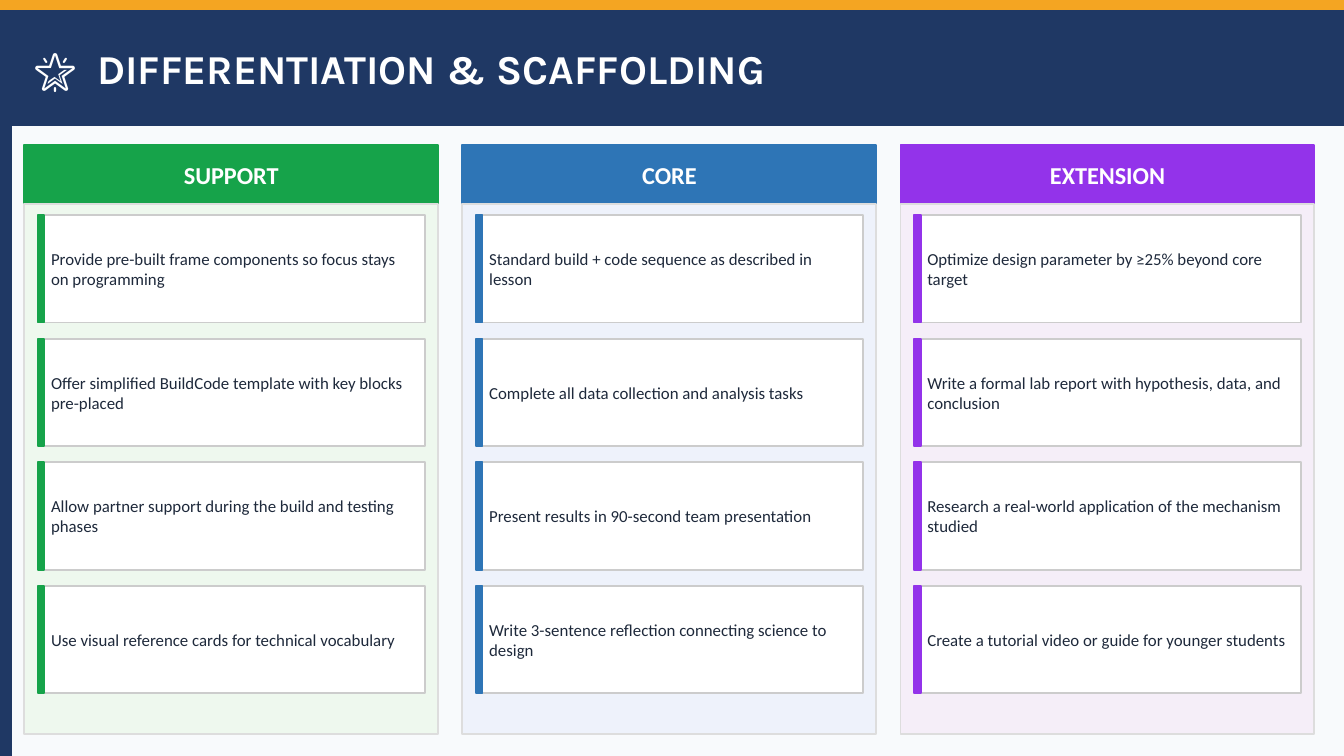
from dataclasses import dataclass

import pptx
import pptx.dml.color
import pptx.enum.shapes
import pptx.enum.text
import pptx.util

ALIGN = pptx.enum.text.PP_ALIGN
SCALE = 4572  # EMU in one px, at 200 px to the inch
COLORS = {
    "page": "F8FAFC", "navy": "1F3864", "gold": "F4A522",
    "white": "FFFFFF", "ink": "1E293B", "edge": "CCCCCC", "rim": "DDDDDD",
    "green": "16A34A", "mint": "EEF8EE",
    "blue": "2E75B6", "sky": "EEF2FB",
    "purple": "9333EA", "lilac": "F5EEF8",
}
WIDE, HIGH = 2000, 1125
BAR = 16


@dataclass(frozen=True)
class Box:
    x: int
    y: int
    w: int
    h: int

    def place(self) -> tuple[int, ...]:
        return tuple(n * SCALE for n in (self.x, self.y, self.w, self.h))


@dataclass(frozen=True)
class Level:
    name: str
    main: str
    tint: str
    tasks: tuple[str, ...]


LEVELS = (
    Level("SUPPORT", "green", "mint", (
        "Provide pre-built frame components so focus stays on programming",
        "Offer simplified BuildCode template with key blocks pre-placed",
        "Allow partner support during the build and testing phases",
        "Use visual reference cards for technical vocabulary",
    )),
    Level("CORE", "blue", "sky", (
        "Standard build + code sequence as described in lesson",
        "Complete all data collection and analysis tasks",
        "Present results in 90-second team presentation",
        "Write 3-sentence reflection connecting science to design",
    )),
    Level("EXTENSION", "purple", "lilac", (
        "Optimize design parameter by ≥25% beyond core target",
        "Write a formal lab report with hypothesis, data, and conclusion",
        "Research a real-world application of the mechanism studied",
        "Create a tutorial video or guide for younger students",
    )),
)


def paint(name: str) -> pptx.dml.color.RGBColor:
    return pptx.dml.color.RGBColor.from_string(COLORS[name])


def write(shape, text: str, *, size: int, color: str, face: str = "Calibri",
          bold: bool = False, align=ALIGN.LEFT) -> None:
    frame = shape.text_frame
    frame.word_wrap = True
    frame.auto_size = pptx.enum.text.MSO_AUTO_SIZE.NONE
    frame.vertical_anchor = pptx.enum.text.MSO_ANCHOR.MIDDLE
    frame.margin_left = frame.margin_right = 0
    frame.margin_top = frame.margin_bottom = 0
    para = frame.paragraphs[0]
    para.alignment = align
    run = para.add_run()
    run.text = text
    run.font.name = face
    run.font.size = pptx.util.Pt(size)
    run.font.bold = bold
    run.font.color.rgb = paint(color)


def block(slide, box: Box, fill: str, line: str = ""):
    """Add a rectangle, outlined in its fill colour unless line is given."""
    shape = slide.shapes.add_shape(
        pptx.enum.shapes.MSO_SHAPE.RECTANGLE, *box.place())
    shape.shadow.inherit = False
    shape.fill.solid()
    shape.fill.fore_color.rgb = paint(fill)
    shape.line.color.rgb = paint(line or fill)
    shape.line.width = pptx.util.Pt(1)
    return shape


def banner(slide) -> None:
    block(slide, Box(0, 0, WIDE, BAR), "gold")
    block(slide, Box(0, BAR, BAR, HIGH - BAR), "navy")
    block(slide, Box(BAR, BAR, WIDE - BAR, 170), "navy")
    title = slide.shapes.title
    title.left, title.top, title.width, title.height = Box(50, BAR, 1900, 170).place()
    write(title, "🌟  DIFFERENTIATION & SCAFFOLDING",
          size=22, color="white", face="Karla", bold=True)
    slide.shapes.element.append(title.element)  # bring in front of the band


def card(slide, x: int, y: int, text: str, color: str) -> None:
    block(slide, Box(x, y, 576, 160), "white", "edge")
    block(slide, Box(x, y, 10, 160), color)
    label = slide.shapes.add_textbox(*Box(x + 20, y + 8, 540, 144).place())
    write(label, text, size=9, color="ink")


def column(slide, x: int, level: Level) -> None:
    head = block(slide, Box(x, 216, 616, 88), level.main)
    write(head, level.name, size=13, color="white", bold=True, align=ALIGN.CENTER)
    block(slide, Box(x, 304, 616, 789), level.tint, "rim")
    for row, task in enumerate(level.tasks):
        card(slide, x + 20, 320 + row * 184, task, level.main)


def main() -> None:
    deck = pptx.Presentation()
    deck.slide_width, deck.slide_height = WIDE * SCALE, HIGH * SCALE
    slide = deck.slides.add_slide(deck.slide_layouts.get_by_name("Title Only"))
    slide.background.fill.solid()
    slide.background.fill.fore_color.rgb = paint("page")
    banner(slide)
    for col, level in enumerate(LEVELS):
        column(slide, 36 + col * 652, level)
    deck.save("out.pptx")


if __name__ == "__main__":
    main()
